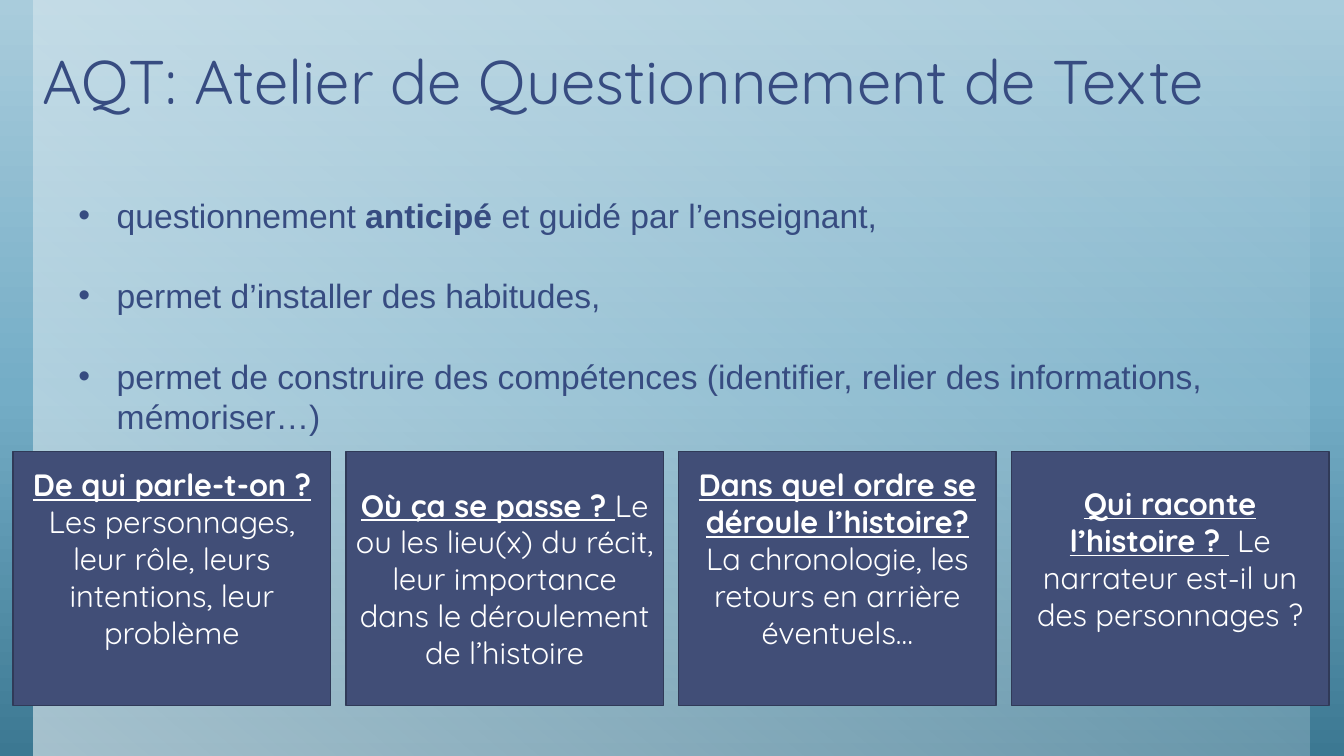
from dataclasses import dataclass

from lxml.etree import SubElement
from pptx import Presentation
from pptx.dml.color import RGBColor
from pptx.enum.shapes import MSO_SHAPE as Shape
from pptx.enum.text import MSO_ANCHOR as Anchor, PP_ALIGN as Align
from pptx.oxml.ns import qn
from pptx.util import Inches, Pt


@dataclass(frozen=True)
class Theme:
    ink: str = "374C81"
    card: str = "414E77"
    card_line: str = "303A58"
    white: str = "FFFFFF"
    # Gradient stops: position, colour, opacity (percent)
    sky: tuple = ((0, "3C7892", 100), (48, "74ADC6", 100), (100, "A9CCDC", 100))
    veil: tuple = ((0, "FFFFFF", 0), (100, "FFFFFF", 55))
    heading_font: str = "Quicksand"
    body_font: str = "Arial"
    title_size: float = 44
    body_size: float = 24
    body_leading: float = 28.8
    card_size: float = 22
    card_leading: float = 26.4


THEME = Theme()

TITLE = "AQT: Atelier de Questionnement de Texte"
# Each run is a text and whether it is emphasised
BULLETS = [
    [("questionnement ", False), ("anticipé", True),
     (" et guidé par l’enseignant,", False)],
    [("permet d’installer des habitudes,", False)],
    [("permet de construire des compétences (identifier, relier des "
      "informations, mémoriser…)", False)],
]
# Question, explanation, bottom inset
CARDS = [
    ("De qui parle-t-on ? ",
     "Les personnages, leur rôle, leurs intentions, leur problème", 0.45),
    ("Où ça se passe ? ",
     "Le ou les lieu(x) du récit, leur importance dans le déroulement "
     "de l’histoire", 0.05),
    ("Dans quel ordre se déroule l’histoire? ",
     "La chronologie, les retours en arrière éventuels…", 0.45),
    ("Qui raconte l’histoire ? ",
     " Le narrateur est-il un des personnages ?", 0.45),
]


def set_gradient(fill, element, stops, angle):
    """Fill with any number of stops; the angle runs clockwise."""
    fill.gradient()
    fill.gradient_angle = 360 - angle
    stop_list = element.find(".//" + qn("a:gsLst"))
    for stop in list(stop_list):
        stop_list.remove(stop)
    for position, color, opacity in stops:
        stop = SubElement(stop_list, qn("a:gs"), pos=str(position * 1000))
        rgb = SubElement(stop, qn("a:srgbClr"), val=color)
        if opacity < 100:
            SubElement(rgb, qn("a:alpha"), val=str(opacity * 1000))


def add_run(paragraph, text, font, size, color, bold=False, underline=False):
    run = paragraph.add_run()
    run.text = text
    run.font.name = font
    run.font.size = Pt(size)
    run.font.color.rgb = RGBColor.from_string(color)
    run.font.bold = bold
    run.font.underline = underline


def add_rectangle(slide, left, top, width, height):
    shape = slide.shapes.add_shape(
        Shape.RECTANGLE, Inches(left), Inches(top), Inches(width), Inches(height))
    shape.shadow.inherit = False
    return shape


def add_text_frame(slide, left, top, width, height):
    box = slide.shapes.add_textbox(
        Inches(left), Inches(top), Inches(width), Inches(height))
    box.text_frame.word_wrap = True
    return box.text_frame


def add_veil(slide):
    veil = add_rectangle(slide, 0.33, 0, 12.66, 7.5)
    set_gradient(veil.fill, veil.element, THEME.veil, 130)
    veil.line.fill.background()


def add_title(slide):
    frame = add_text_frame(slide, 0.29, 0.08, 12.89, 1.15)
    frame.vertical_anchor = Anchor.BOTTOM
    frame.margin_left = frame.margin_right = Inches(0.13)
    frame.margin_top = frame.margin_bottom = Inches(0.07)
    paragraph = frame.paragraphs[0]
    paragraph.line_spacing = 0.85
    add_run(paragraph, TITLE, THEME.heading_font, THEME.title_size, THEME.ink)


def add_bullets(slide):
    frame = add_text_frame(slide, 0.68, 1.88, 11.97, 2.5)
    for index, runs in enumerate(BULLETS):
        paragraph = frame.paragraphs[0] if index == 0 else frame.add_paragraph()
        paragraph.line_spacing = Pt(THEME.body_leading)
        if index:
            paragraph.space_before = Pt(THEME.body_leading)
        for text, bold in runs:
            add_run(paragraph, text, THEME.body_font, THEME.body_size,
                    THEME.ink, bold)
        # Hanging bullet
        properties = paragraph._p.get_or_add_pPr()
        properties.set("marL", str(Inches(0.38)))
        properties.set("indent", str(-Inches(0.38)))
        SubElement(properties, qn("a:buFont"), typeface=THEME.body_font)
        SubElement(properties, qn("a:buChar"), char="•")


def add_card(slide, left, question, explanation, bottom_inset):
    card = add_rectangle(slide, left, 4.48, 3.15, 2.52)
    card.fill.solid()
    card.fill.fore_color.rgb = RGBColor.from_string(THEME.card)
    card.line.color.rgb = RGBColor.from_string(THEME.card_line)
    card.line.width = Pt(1)
    frame = card.text_frame
    frame.word_wrap = True
    frame.vertical_anchor = Anchor.MIDDLE
    frame.margin_bottom = Inches(bottom_inset)
    paragraph = frame.paragraphs[0]
    paragraph.alignment = Align.CENTER
    paragraph.line_spacing = Pt(THEME.card_leading)
    for text, strong in ((question, True), (explanation, False)):
        add_run(paragraph, text, THEME.heading_font, THEME.card_size,
                THEME.white, bold=strong, underline=strong)


def main():
    presentation = Presentation()
    presentation.slide_width = Inches(13.33)
    presentation.slide_height = Inches(7.5)
    slide = presentation.slides.add_slide(presentation.slide_layouts[6])

    # Backdrop
    set_gradient(slide.background.fill, slide.element, THEME.sky, 270)
    add_veil(slide)

    # Title and key points
    add_title(slide)
    add_bullets(slide)

    # Row of question cards
    for column, card in enumerate(CARDS):
        add_card(slide, 0.13 + 3.3 * column, *card)

    presentation.save("out.pptx")


if __name__ == "__main__":
    main()
